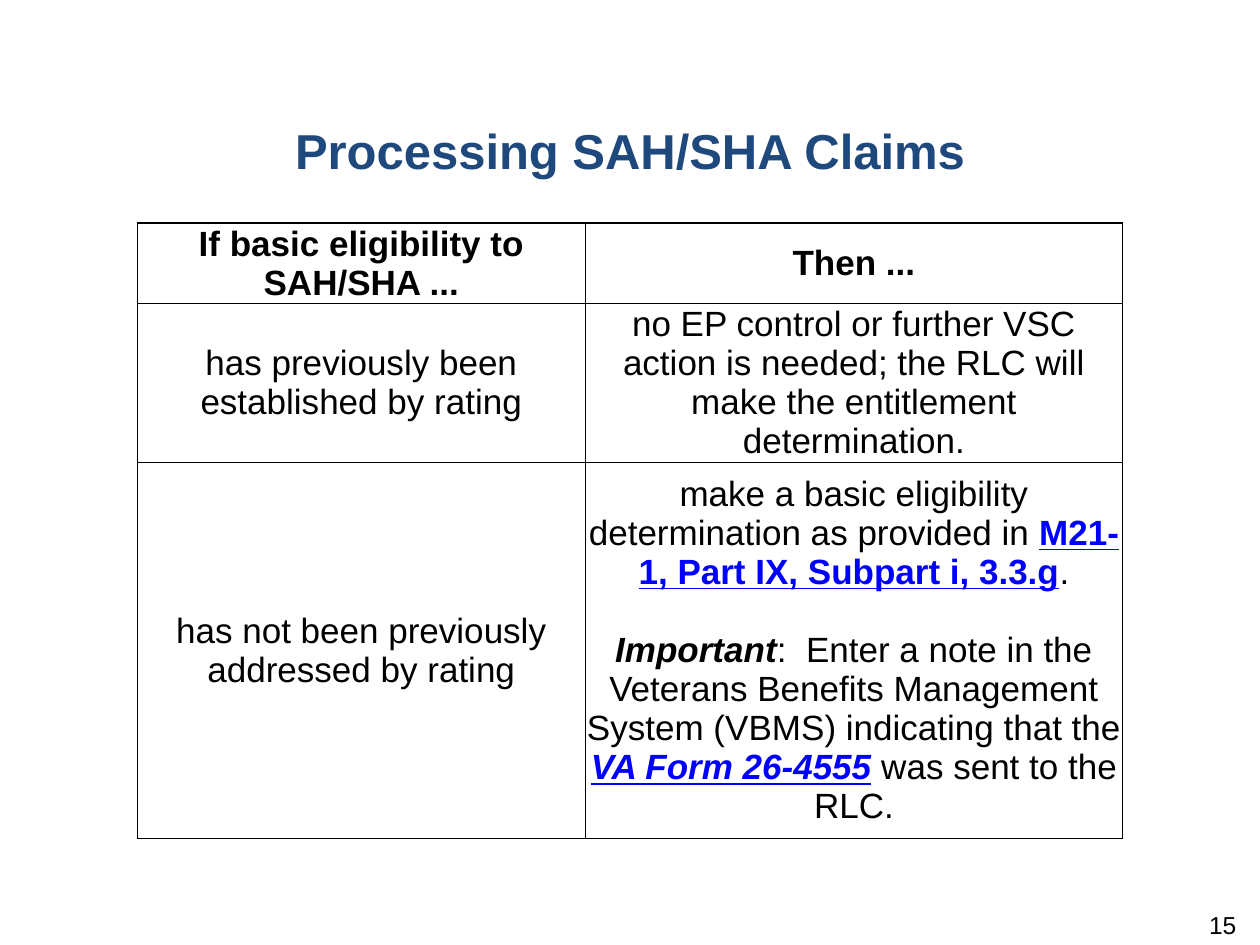
from lxml import etree
from pptx import Presentation
from pptx.dml.color import RGBColor
from pptx.enum.text import MSO_ANCHOR, PP_ALIGN
from pptx.oxml.ns import qn
from pptx.util import Pt

CENTER, RIGHT = PP_ALIGN.CENTER, PP_ALIGN.RIGHT
TOP, MIDDLE = MSO_ANCHOR.TOP, MSO_ANCHOR.MIDDLE
FONT = "Arial"
BLACK, WHITE, NAVY, BLUE = "000000", "FFFFFF", "1F497D", "0000FF"

# Content: a cell is a list of paragraphs, a paragraph a list of (text, style)
TITLE = "Processing SAH/SHA Claims"
PAGE = "15"
ROWS = [
    [[[("If basic eligibility to SAH/SHA ...", "b")]],
     [[("Then ...", "b")]]],
    [[[("has previously been established by rating", "")]],
     [[("no EP control or further VSC action is needed; the RLC will make "
        "the entitlement determination.", "")]]],
    [[[("has not been previously addressed by rating", "")]],
     [[("make a basic eligibility determination as provided in ", ""),
       ("M21-1, Part IX, Subpart i, 3.3.g", "bu"),
       (".", "")],
      [("Important", "bi"),
       (":  Enter a note in the Veterans Benefits Management System (VBMS) "
        "indicating that the ", ""),
       ("VA Form 26-4555", "biu"),
       (" was sent to the RLC.", "")]]],
]

# Sizes in points
WIDTHS = [256, 307]
HEIGHTS = [45.8, 90.4, 215]
LEFT, UPPER = 78.5, 127.5
INSET = 0.72
GAP = 22.3


def color(code):
    return RGBColor.from_string(code)


def style(para, size, code, align, bold=False):
    para.alignment = align
    font = para.font
    font.name, font.size, font.bold = FONT, Pt(size), bold
    font.color.rgb = color(code)


def inset(frame, left, top, right, bottom):
    frame.margin_left, frame.margin_top = Pt(left), Pt(top)
    frame.margin_right, frame.margin_bottom = Pt(right), Pt(bottom)


def border(cell):
    props = cell._tc.get_or_add_tcPr()
    for i, side in enumerate(("lnL", "lnR", "lnT", "lnB")):
        line = etree.Element(qn("a:" + side), w=str(Pt(1)))
        fill = etree.SubElement(line, qn("a:solidFill"))
        etree.SubElement(fill, qn("a:srgbClr"), val=BLACK)
        props.insert(i, line)


def write(cell, paras):
    frame = cell.text_frame
    for i, runs in enumerate(paras):
        para = frame.add_paragraph() if i else frame.paragraphs[0]
        style(para, 20, BLACK, CENTER)
        if i:
            para.space_before = Pt(GAP)
        for text, marks in runs:
            run = para.add_run()
            run.text = text
            if "b" in marks:
                run.font.bold = True
            if "i" in marks:
                run.font.italic = True
            if "u" in marks:
                run.font.underline = True
                run.font.color.rgb = color(BLUE)


deck = Presentation()
deck.slide_width, deck.slide_height = Pt(720), Pt(540)
slide = deck.slides.add_slide(deck.slide_layouts[5])

# Title
title = slide.shapes.title
title.left, title.top, title.width, title.height = Pt(0), Pt(62.6), Pt(720), Pt(85.7)
frame = title.text_frame
frame.text = TITLE
frame.vertical_anchor = TOP
inset(frame, 7.2, 6.5, 7.2, 3.6)
style(frame.paragraphs[0], 28, NAVY, CENTER, True)

# Table
table = slide.shapes.add_table(
    len(ROWS), len(WIDTHS), Pt(LEFT), Pt(UPPER),
    Pt(sum(WIDTHS)), Pt(sum(HEIGHTS))).table
table.horz_banding = False
for col, width in zip(table.columns, WIDTHS):
    col.width = Pt(width)
for row, height, cells in zip(table.rows, HEIGHTS, ROWS):
    row.height = Pt(height)
    for cell, paras in zip(row.cells, cells):
        inset(cell, INSET, INSET, INSET, INSET)
        cell.vertical_anchor = MIDDLE
        cell.fill.solid()
        cell.fill.fore_color.rgb = color(WHITE)
        border(cell)
        write(cell, paras)

# Page number
box = slide.shapes.add_textbox(Pt(545.8), Pt(519.8), Pt(167.8), Pt(28.8))
frame = box.text_frame
frame.word_wrap = True
frame.text = PAGE
inset(frame, 7.2, 0, 7.2, 3.6)
style(frame.paragraphs[0], 14, BLACK, RIGHT)

deck.save("out.pptx")
